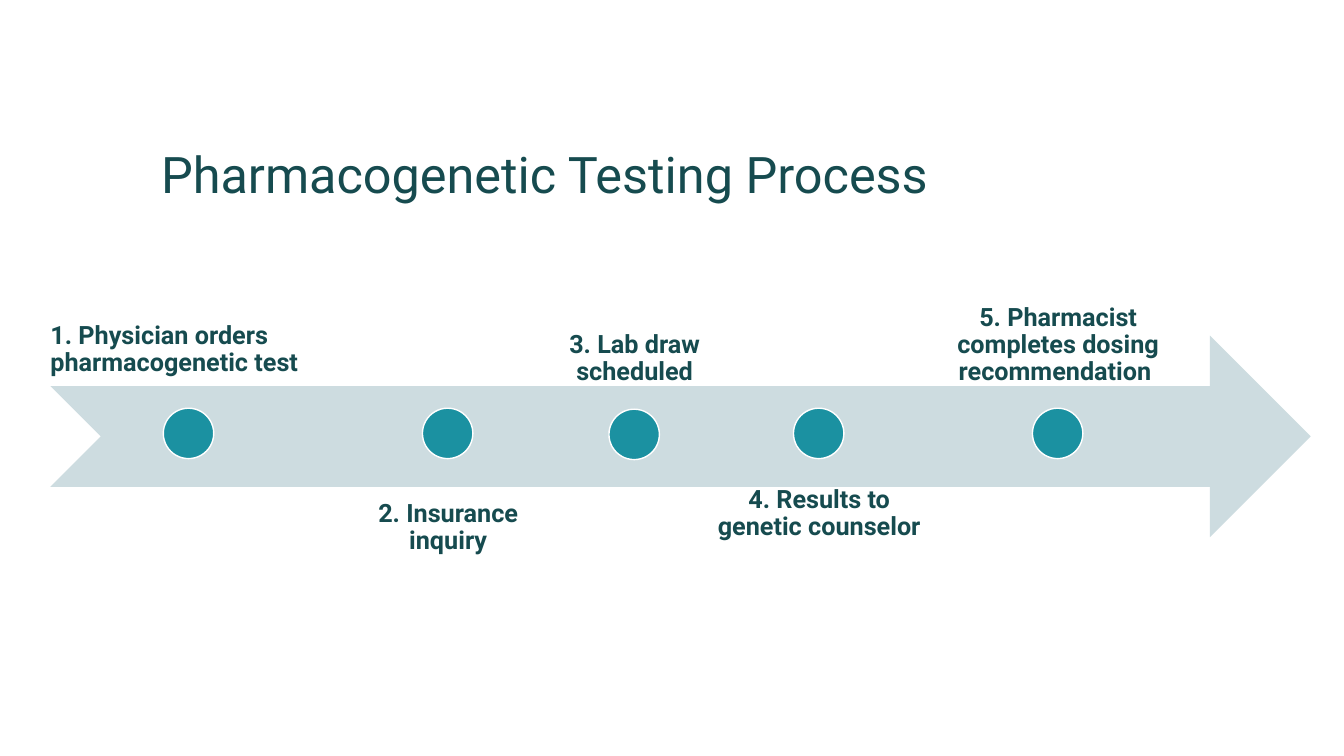
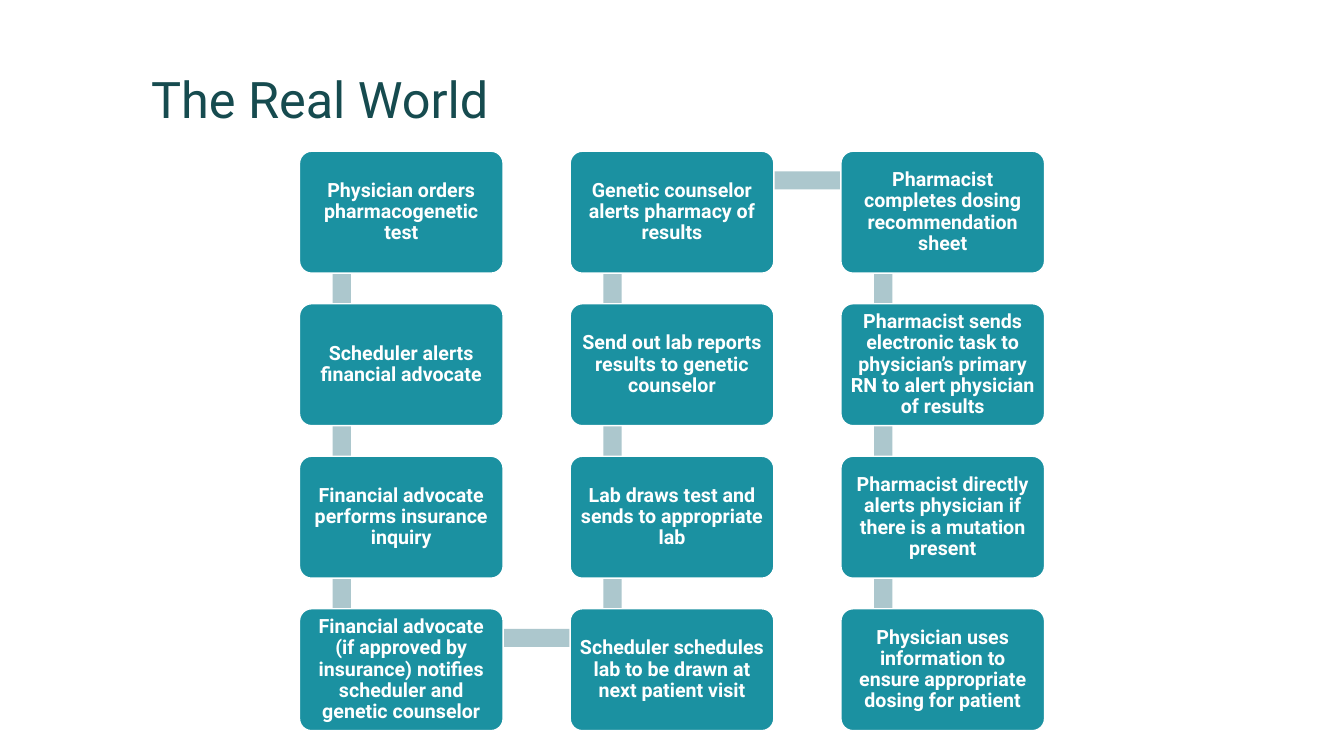
"""Builds two slides on the pharmacogenetic testing process."""
from itertools import pairwise

from pptx import Presentation
from pptx.dml.color import RGBColor
from pptx.enum.shapes import MSO_SHAPE
from pptx.enum.text import MSO_ANCHOR, PP_ALIGN
from pptx.util import Inches, Pt

COLORS = {
    "ink": "164B4F",
    "teal": "1B91A1",
    "arrow": "CDDCE0",
    "link": "ACC7CD",
    "white": "FFFFFF",
}
FONT = "Roboto"

TIMELINE_LABELS = [
    ("1. Physician orders pharmacogenetic test", (0.5, 3.14, 2.81, 0.6), MSO_ANCHOR.BOTTOM, PP_ALIGN.LEFT),
    ("2. Insurance inquiry", (3.52, 4.97, 1.85, 1.72), MSO_ANCHOR.TOP, PP_ALIGN.CENTER),
    ("3. Lab draw scheduled", (5.58, 1.83, 1.43, 2), MSO_ANCHOR.BOTTOM, PP_ALIGN.CENTER),
    ("4. Results to genetic counselor", (7.08, 4.83, 2.09, 2), MSO_ANCHOR.TOP, PP_ALIGN.CENTER),
    ("5. Pharmacist completes dosing recommendation ", (9.24, 1.83, 2.51, 2), MSO_ANCHOR.BOTTOM, PP_ALIGN.CENTER),
]
MARKERS = [(1.62, 4.05), (4.19, 4.05), (6.04, 4.06), (7.87, 4.05), (10.24, 4.05)]
MARKER_SIZE = 0.5

WORKFLOW_STEPS = [
    "Physician orders pharmacogenetic test",
    "Scheduler alerts financial advocate",
    "Financial advocate performs insurance inquiry",
    "Financial advocate (if approved by insurance) notifies scheduler and genetic counselor",
    "Scheduler schedules lab to be drawn at next patient visit",
    "Lab draws test and sends to appropriate lab",
    "Send out lab reports results to genetic counselor",
    "Genetic counselor alerts pharmacy of results",
    "Pharmacist completes dosing recommendation sheet",
    "Pharmacist sends electronic task to physician’s primary RN to alert physician of results",
    "Pharmacist directly alerts physician if there is a mutation present",
    "Physician uses information to ensure appropriate dosing for patient",
]
ROWS = 4
GRID_LEFT, GRID_TOP = 2.97, 1.5
COLUMN_PITCH, ROW_PITCH = 2.685, 1.513
BOX_WIDTH, BOX_HEIGHT = 2.02, 1.21
LINK_THICKNESS = 0.18


def color(name):
    """Return the named palette colour."""
    return RGBColor.from_string(COLORS[name])


def write(shape, text, size, ink="ink", bold=False, align=PP_ALIGN.LEFT,
          anchor=MSO_ANCHOR.MIDDLE, insets=(0, 0)):
    """Put one styled paragraph into a shape."""
    frame = shape.text_frame
    frame.word_wrap = True
    frame.vertical_anchor = anchor
    frame.margin_left = frame.margin_right = Inches(insets[0])
    frame.margin_top = frame.margin_bottom = Inches(insets[1])
    paragraph = frame.paragraphs[0]
    paragraph.text = text
    paragraph.alignment = align
    paragraph.line_spacing = 0.9
    paragraph.font.name = FONT
    paragraph.font.size = Pt(size)
    paragraph.font.bold = bold
    paragraph.font.color.rgb = color(ink)


def add_text(slide, box, text, size, **style):
    """Add a text box."""
    shape = slide.shapes.add_textbox(*map(Inches, box))
    write(shape, text, size, **style)


def add_filled(slide, kind, box, fill, outlined=False):
    """Add a filled preset shape, with a thin white outline if asked."""
    shape = slide.shapes.add_shape(kind, *map(Inches, box))
    shape.shadow.inherit = False
    shape.fill.solid()
    shape.fill.fore_color.rgb = color(fill)
    if outlined:
        shape.line.color.rgb = color("white")
        shape.line.width = Pt(1)
    else:
        shape.line.fill.background()
    return shape


def add_titled_slide(presentation, title, left, top):
    """Add a blank slide with its title."""
    slide = presentation.slides.add_slide(presentation.slide_layouts[6])
    add_text(slide, (left, top, 10.5, 1.25), title, 36,
             anchor=MSO_ANCHOR.BOTTOM, insets=(0.1, 0.05))
    return slide


def add_timeline(slide):
    """Draw the arrow with its markers and labels."""
    add_filled(slide, MSO_SHAPE.NOTCHED_RIGHT_ARROW, (0.5, 3.33, 12.5, 2), "arrow")
    for (text, box, anchor, align), (left, top) in zip(TIMELINE_LABELS, MARKERS):
        add_text(slide, box, text, 18, bold=True, anchor=anchor, align=align)
        add_filled(slide, MSO_SHAPE.OVAL, (left, top, MARKER_SIZE, MARKER_SIZE), "teal", outlined=True)


def step_position(index):
    """Return left and top of a step; columns run down and up in turn."""
    column, row = divmod(index, ROWS)
    if column % 2:
        row = ROWS - 1 - row
    return GRID_LEFT + column * COLUMN_PITCH, GRID_TOP + row * ROW_PITCH


def add_link(slide, start, end):
    """Draw the bar that joins two neighbouring steps."""
    left, top = min(start[0], end[0]), min(start[1], end[1])
    if start[0] == end[0]:
        box = (left + 0.33, top + 0.3, LINK_THICKNESS, ROW_PITCH)
    else:
        box = (left + 0.41, top + 0.2, COLUMN_PITCH, LINK_THICKNESS)
    add_filled(slide, MSO_SHAPE.RECTANGLE, box, "link")


def add_step(slide, position, text):
    """Draw one workflow step."""
    shape = add_filled(slide, MSO_SHAPE.ROUNDED_RECTANGLE,
                       (*position, BOX_WIDTH, BOX_HEIGHT), "teal", outlined=True)
    shape.adjustments[0] = 0.1
    write(shape, text, 14, ink="white", bold=True, align=PP_ALIGN.CENTER, insets=(0.06, 0.06))


def add_workflow(slide):
    """Draw the links, then the steps over them."""
    positions = [step_position(index) for index in range(len(WORKFLOW_STEPS))]
    for start, end in pairwise(positions):
        add_link(slide, start, end)
    for position, text in zip(positions, WORKFLOW_STEPS):
        add_step(slide, position, text)


def main():
    """Build and save the presentation."""
    presentation = Presentation()
    presentation.slide_width = Inches(13.33)
    presentation.slide_height = Inches(7.5)
    add_timeline(add_titled_slide(presentation, "Pharmacogenetic Testing Process", 1.5, 0.83))
    add_workflow(add_titled_slide(presentation, "The Real World", 1.4, 0.08))
    presentation.save("out.pptx")


if __name__ == "__main__":
    main()
